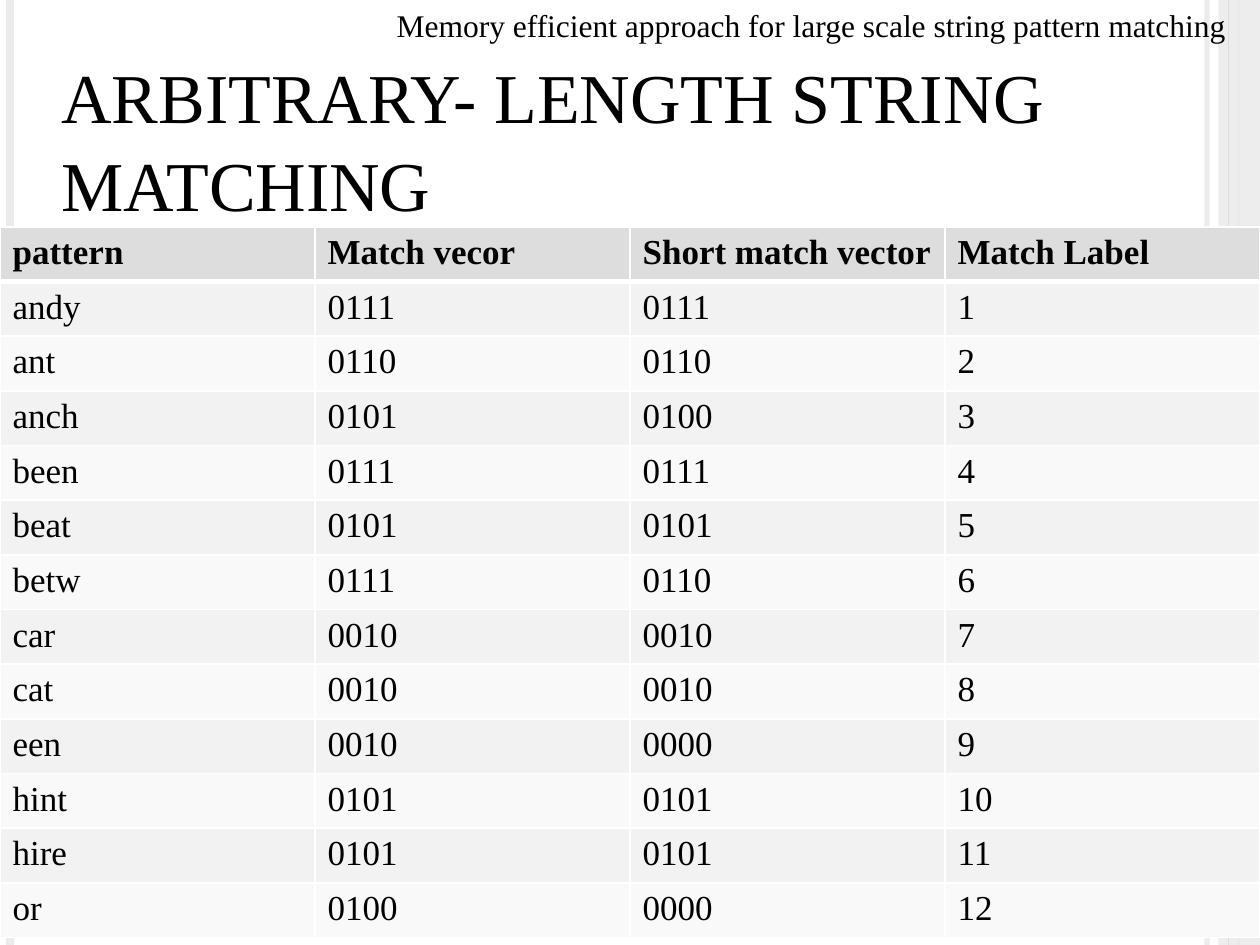
from dataclasses import dataclass

from lxml.etree import SubElement
from pptx import Presentation
from pptx.dml.color import RGBColor
from pptx.enum.shapes import MSO_CONNECTOR, MSO_SHAPE
from pptx.enum.text import MSO_ANCHOR
from pptx.oxml.ns import qn
from pptx.util import Inches, Pt


@dataclass(frozen=True)
class Theme:
    font: str = "Times New Roman"
    text: str = "000000"
    pale: str = "EBEBEB"
    grey: str = "DDDDDD"
    border: str = "FFFFFF"
    bands: tuple = ("F2F2F2", "F9F9F9")
    title_size: int = 40
    table_size: int = 20
    caption_size: int = 18


THEME = Theme()

HEADER = ("pattern", "Match vecor", "Short match vector", "Match Label")
PATTERNS = (
    ("andy", "0111", "0111"),
    ("ant", "0110", "0110"),
    ("anch", "0101", "0100"),
    ("been", "0111", "0111"),
    ("beat", "0101", "0101"),
    ("betw", "0111", "0110"),
    ("car", "0010", "0010"),
    ("cat", "0010", "0010"),
    ("een", "0010", "0000"),
    ("hint", "0101", "0101"),
    ("hire", "0101", "0101"),
    ("or", "0100", "0000"),
)


def write_text(frame, text, size, bold=False, line_spacing=None):
    paragraph = frame.paragraphs[0]
    paragraph.line_spacing = line_spacing
    run = paragraph.add_run()
    run.text = text
    run.font.name = THEME.font
    run.font.size = Pt(size)
    run.font.bold = bold
    run.font.color.rgb = RGBColor.from_string(THEME.text)


def add_text_box(slide, box, text, size, anchor=MSO_ANCHOR.TOP, **text_format):
    frame = slide.shapes.add_textbox(*map(Inches, box)).text_frame
    frame.word_wrap = True
    frame.vertical_anchor = anchor
    write_text(frame, text, size, **text_format)


def set_opacity(fill_element, percent):
    color = fill_element.find(".//" + qn("a:srgbClr"))
    SubElement(color, qn("a:alpha"), val=str(percent * 1000))


def add_stripe(slide, x, top, height, color, width, opacity=100):
    line = slide.shapes.add_connector(
        MSO_CONNECTOR.STRAIGHT, Inches(x), Inches(top), Inches(x), Inches(top + height)
    )
    line.line.color.rgb = RGBColor.from_string(color)
    line.line.width = Pt(width)
    properties = line._element.spPr
    if opacity < 100:
        set_opacity(properties.find(qn("a:ln")), opacity)
    SubElement(properties, qn("a:effectLst"))


def add_side_stripes(slide, box):
    left, top, width, height = box
    right = left + width
    add_stripe(slide, right - 0.42, top, height, THEME.pale, 3, opacity=93)
    add_stripe(slide, left + 0.08, top, height, THEME.pale, 4.5)
    add_stripe(slide, right - 0.17, top, height, THEME.grey, 1.5)

    # Translucent band along the right edge
    band = slide.shapes.add_shape(
        MSO_SHAPE.RECTANGLE, Inches(right - 0.33), Inches(top), Inches(0.33), Inches(height)
    )
    band.shadow.inherit = False
    band.fill.solid()
    band.fill.fore_color.rgb = RGBColor.from_string(THEME.pale)
    band.line.fill.background()
    set_opacity(band._element.spPr.find(qn("a:solidFill")), 87)

    add_stripe(slide, right - 0.25, top, height, THEME.grey, 0.75)


def set_borders(cell, **widths):
    properties = cell._tc.get_or_add_tcPr()
    for position, (side, width) in enumerate(widths.items()):
        line = properties.makeelement(qn(f"a:{side}"), {"w": str(Pt(width))})
        fill = SubElement(line, qn("a:solidFill"))
        SubElement(fill, qn("a:srgbClr"), val=THEME.border)
        properties.insert(position, line)


def add_match_table(slide, box):
    rows = [HEADER] + [(*row, str(label)) for label, row in enumerate(PATTERNS, 1)]
    left, top, width, height = map(Inches, box)
    table = slide.shapes.add_table(
        len(rows), len(HEADER), left, top, width, height
    ).table
    for row_index, row in enumerate(rows):
        table.rows[row_index].height = height // len(rows)
        is_header = row_index == 0
        color = THEME.grey if is_header else THEME.bands[(row_index - 1) % 2]
        for column_index, text in enumerate(row):
            cell = table.cell(row_index, column_index)
            cell.fill.solid()
            cell.fill.fore_color.rgb = RGBColor.from_string(color)
            write_text(cell.text_frame, text, THEME.table_size, bold=is_header)
            set_borders(
                cell, lnL=1, lnR=1,
                lnT=3 if row_index == 1 else 1,
                lnB=3 if is_header else 1,
            )


def main():
    presentation = Presentation()
    presentation.slide_width = Inches(10)
    presentation.slide_height = Inches(7.5)
    slide = presentation.slides.add_slide(presentation.slide_layouts[6])

    # Background decoration
    add_side_stripes(slide, (0, 0, 10, 7.5))

    # Title and running caption
    add_text_box(
        slide, (0.39, 0.39, 9.14, 1.45), "ARBITRARY- LENGTH STRING MATCHING",
        THEME.title_size, anchor=MSO_ANCHOR.BOTTOM, line_spacing=1.05,
    )
    add_text_box(
        slide, (3.05, 0, 6.95, 0.4),
        "Memory efficient approach for large scale string pattern matching",
        THEME.caption_size,
    )

    # Patterns and their match vectors
    add_match_table(slide, (0, 1.8, 10, 5.63))
    presentation.save("out.pptx")


if __name__ == "__main__":
    main()
